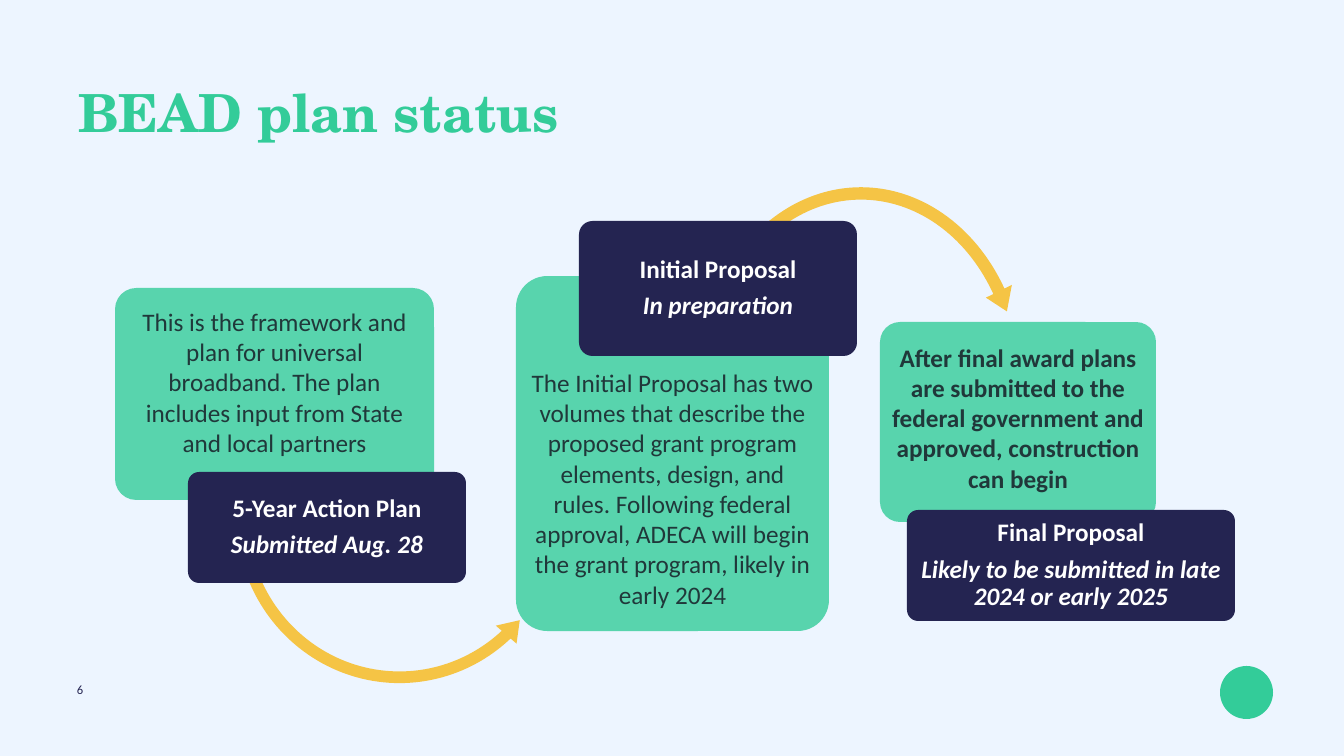
from lxml import etree
from pptx import Presentation
from pptx.dml.color import RGBColor
from pptx.enum.shapes import MSO_SHAPE
from pptx.enum.text import MSO_ANCHOR, MSO_AUTO_SIZE, PP_ALIGN
from pptx.oxml.ns import qn
from pptx.util import Pt

EMU_PER_PX = 914400 / 50.4
ROUND, OVAL = MSO_SHAPE.ROUNDED_RECTANGLE, MSO_SHAPE.OVAL
ARROW_UP, ARROW_DOWN = MSO_SHAPE.CIRCULAR_ARROW, MSO_SHAPE.LEFT_CIRCULAR_ARROW
LEFT, CENTER = PP_ALIGN.LEFT, PP_ALIGN.CENTER
TOP, MIDDLE = MSO_ANCHOR.TOP, MSO_ANCHOR.MIDDLE
NO_FIT = MSO_AUTO_SIZE.NONE


def px(n):
    return round(n * EMU_PER_PX)


def rgb(value):
    return RGBColor.from_string(value)


class Deck:
    GREEN, NAVY, YELLOW = "33CC99", "242451", "F5C445"
    WHITE, INK, SKY = "FFFFFF", "20383A", "EDF5FF"
    BODY, HEAD = "Calibri", "TeX Gyre Schola"

    def __init__(self, width, height):
        self.prs = Presentation()
        self.prs.slide_width, self.prs.slide_height = px(width), px(height)
        self.s = self.prs.slides.add_slide(self.prs.slide_layouts[5])
        self.s.background.fill.solid()
        self.s.background.fill.fore_color.rgb = rgb(self.SKY)

    def frame(self, sp, insets, anchor):
        tf = sp.text_frame
        tf.word_wrap, tf.auto_size, tf.vertical_anchor = True, NO_FIT, anchor
        tf.margin_left, tf.margin_top, tf.margin_right, tf.margin_bottom = map(px, insets)
        return tf

    def style(self, p, size, color, font=BODY, bold=False, italic=False,
              align=LEFT, spacing=0.9):
        p.alignment, p.line_spacing = align, spacing
        for r in p.runs:
            f = r.font
            f.name, f.size, f.bold, f.italic = font, Pt(size), bold, italic
            f.color.rgb = rgb(color)

    def title(self, box, text):
        sp = self.s.shapes.title
        sp.left, sp.top, sp.width, sp.height = map(px, box)
        tf = self.frame(sp, (5, 3, 5, 3), MIDDLE)
        tf.text = text
        self.style(tf.paragraphs[0], 75, self.GREEN, self.HEAD, bold=True)

    def page_number(self, box, text):
        sp = self.s.shapes.add_textbox(*map(px, box))
        tf = self.frame(sp, (5, 3, 5, 3), TOP)
        tf.text = text
        self.style(tf.paragraphs[0], 18, self.NAVY)

    def shape(self, kind, box, color, adjustments=(), opacity=100):
        sp = self.s.shapes.add_shape(kind, *map(px, box))
        sp.shadow.inherit = False
        sp.fill.solid()
        sp.fill.fore_color.rgb = rgb(color)
        sp.line.fill.background()
        for i, value in enumerate(adjustments):
            sp.adjustments[i] = value
        if opacity < 100:
            clr = sp.fill._xPr.find(qn("a:solidFill"))[0]
            etree.SubElement(clr, qn("a:alpha"), val=str(opacity * 1000))
        return sp

    def card(self, box, text, top_inset, bold):
        sp = self.shape(ROUND, box, self.GREEN, [0.1], opacity=80)
        tf = self.frame(sp, (5, top_inset, 5, 5), TOP)
        tf.text = text
        self.style(tf.paragraphs[0], 36, self.INK, bold=bold, align=CENTER, spacing=1.0)

    def label(self, box, name, status):
        sp = self.shape(ROUND, box, self.NAVY, [0.1])
        tf = self.frame(sp, (4, 3, 4, 3), MIDDLE)
        tf.text = f"{name}\n{status}"
        for p, italic in zip(tf.paragraphs, (False, True)):
            self.style(p, 36, self.WHITE, bold=True, italic=italic, align=CENTER)
        tf.paragraphs[0].space_after = Pt(12.6)


# Each step: card, optional arrow to the next step, label
STEPS = [
    dict(card=((115, 288, 319, 212),
               "This is the framework and plan for universal broadband. "
               "The plan includes input from State and local partners", 12, False),
         arrow=(ARROW_DOWN, (228, 340, 343, 351), Deck.YELLOW,
                (0.034, 4.269, 28.89, 97.111, 0.04)),
         label=((188, 472, 278, 111), "5-Year Action Plan", "Submitted Aug. 28")),
    dict(card=((516, 276, 313, 355),
               "The Initial Proposal has two volumes that describe the proposed grant "
               "program elements, design, and rules. Following federal approval, ADECA "
               "will begin the grant program, likely in early 2024", 82, False),
         arrow=(ARROW_UP, (689, 179, 344, 408), Deck.YELLOW,
                (0.036, 4.493, 195.828, 127.831, 0.042)),
         label=((579, 221, 278, 135), "Initial Proposal", "In preparation")),
    dict(card=((880, 322, 276, 200),
               "After final award plans are submitted to the federal government and "
               "approved, construction can begin", 14, True),
         label=((907, 510, 328, 111), "Final Proposal",
                "Likely to be submitted in late 2024 or early 2025")),
]


def main():
    deck = Deck(1344, 756)

    # Page furniture and title
    deck.shape(OVAL, (1220, 666, 53, 53), Deck.GREEN)
    deck.page_number((72, 681, 967, 19), "6")
    deck.title((73, 84, 1198, 63), "BEAD plan status")

    # Process steps
    for step in STEPS:
        deck.card(*step["card"])
        if "arrow" in step:
            deck.shape(*step["arrow"])
        deck.label(*step["label"])

    deck.prs.save("out.pptx")


if __name__ == "__main__":
    main()
